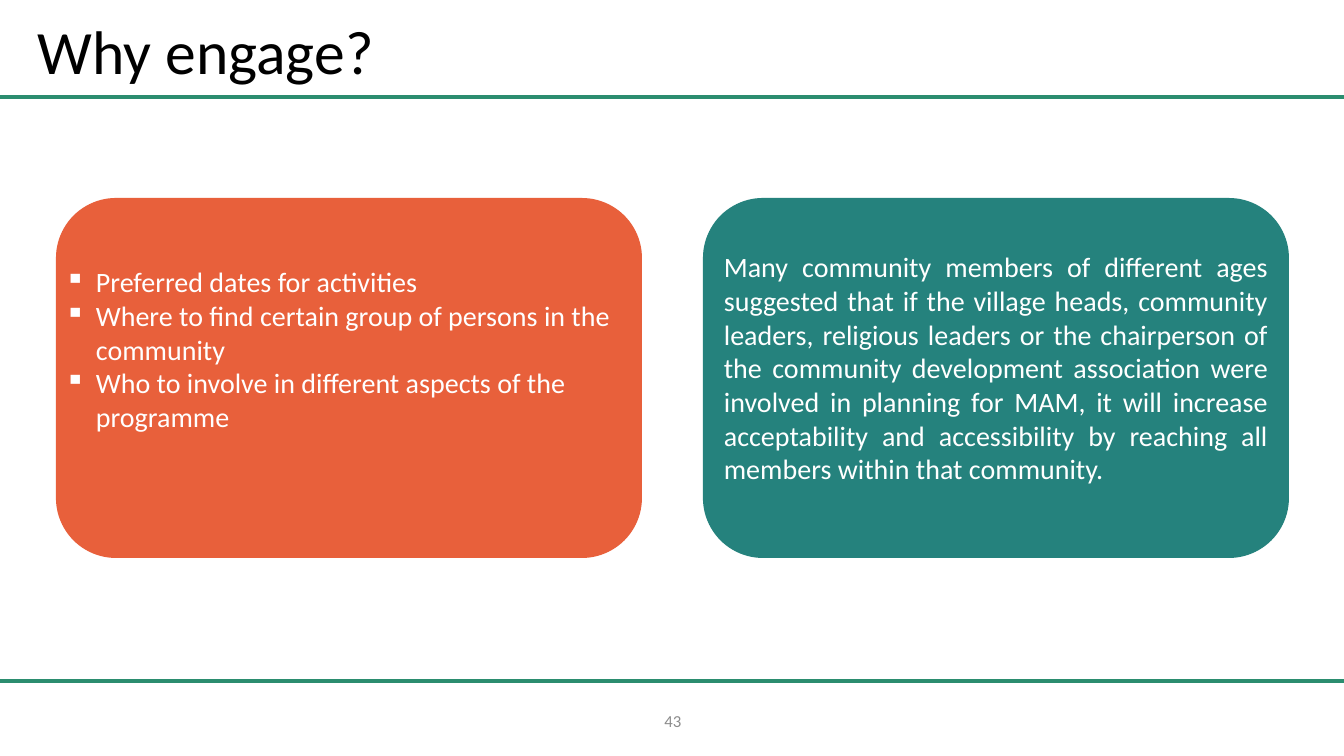
from lxml import etree
from pptx import Presentation
from pptx import util as u
from pptx.dml.color import RGBColor
from pptx.enum import shapes, text
from pptx.oxml.ns import qn

SLIDE_W, SLIDE_H = 1344, 756
PX = u.Inches(13.333) / SLIDE_W
THEME = {
    "font": "Calibri",
    "rule": RGBColor.from_string("2B8D6F"),
    "orange": RGBColor.from_string("E8603B"),
    "teal": RGBColor.from_string("25827D"),
    "title": RGBColor.from_string("000000"),
    "body": RGBColor.from_string("FFFFFF"),
    "number": RGBColor.from_string("8C8C8C"),
    "title_size": u.Pt(44),
    "body_size": u.Pt(20),
    "number_size": u.Pt(12),
    "rule_width": u.Pt(3),
}
ALIGN, ANCHOR = text.PP_ALIGN, text.MSO_ANCHOR


def px(*lengths):
    return [u.Emu(round(length * PX)) for length in lengths]


def add_text(box, lines, role, anchor=ANCHOR.TOP, bullet=None, **paragraph_format):
    """Write lines in the theme's style for role, each with an optional bullet."""
    frame = slide.shapes.add_textbox(*px(*box)).text_frame
    frame.word_wrap = True
    frame.vertical_anchor = anchor
    frame.text = "\n".join(lines)
    for paragraph in frame.paragraphs:
        if bullet:
            indent, = px(31)
            properties = paragraph._p.get_or_add_pPr()
            properties.set("marL", str(indent))
            properties.set("indent", str(-indent))
            etree.SubElement(properties, qn("a:buChar")).set("char", bullet)
        for name, value in paragraph_format.items():
            setattr(paragraph, name, value)
        run_font = paragraph.runs[0].font
        run_font.name = THEME["font"]
        run_font.size = THEME[f"{role}_size"]
        run_font.color.rgb = THEME[role]


deck = Presentation()
deck.slide_width, deck.slide_height = px(SLIDE_W, SLIDE_H)
slide = deck.slides.add_slide(deck.slide_layouts[6])

for rule_y in (681, 97):
    rule = slide.shapes.add_connector(
        shapes.MSO_CONNECTOR.STRAIGHT, *px(0, rule_y, SLIDE_W, rule_y))
    rule.line.color.rgb = THEME["rule"]
    rule.line.width = THEME["rule_width"]
    etree.SubElement(rule._element.spPr, qn("a:effectLst"))

for card_x, card_color in ((703, "teal"), (56, "orange")):
    card = slide.shapes.add_shape(
        shapes.MSO_SHAPE.ROUNDED_RECTANGLE, *px(card_x, 198, 586, 360))
    card.shadow.inherit = False
    card.fill.solid()
    card.fill.fore_color.rgb = THEME[card_color]
    card.line.fill.background()

add_text((28, -18, 1159, 146), ["Why engage?"], "title", ANCHOR.MIDDLE, line_spacing=0.9)
add_text((446, 701, 454, 40), ["43"], "number", ANCHOR.MIDDLE, alignment=ALIGN.CENTER)
add_text(
    (714, 245, 564, 248),
    ["Many community members of different ages suggested that if the village heads, "
     "community leaders, religious leaders or the chairperson of the community "
     "development association were involved in planning for MAM, it will increase "
     "acceptability and accessibility by reaching all members within that community."],
    "body", alignment=ALIGN.JUSTIFY)
add_text(
    (55, 260, 586, 179),
    ["Preferred dates for activities",
     "Where to find certain group of persons in the community",
     "Who to involve in different aspects of the programme"],
    "body", bullet="▪")

deck.save("out.pptx")
